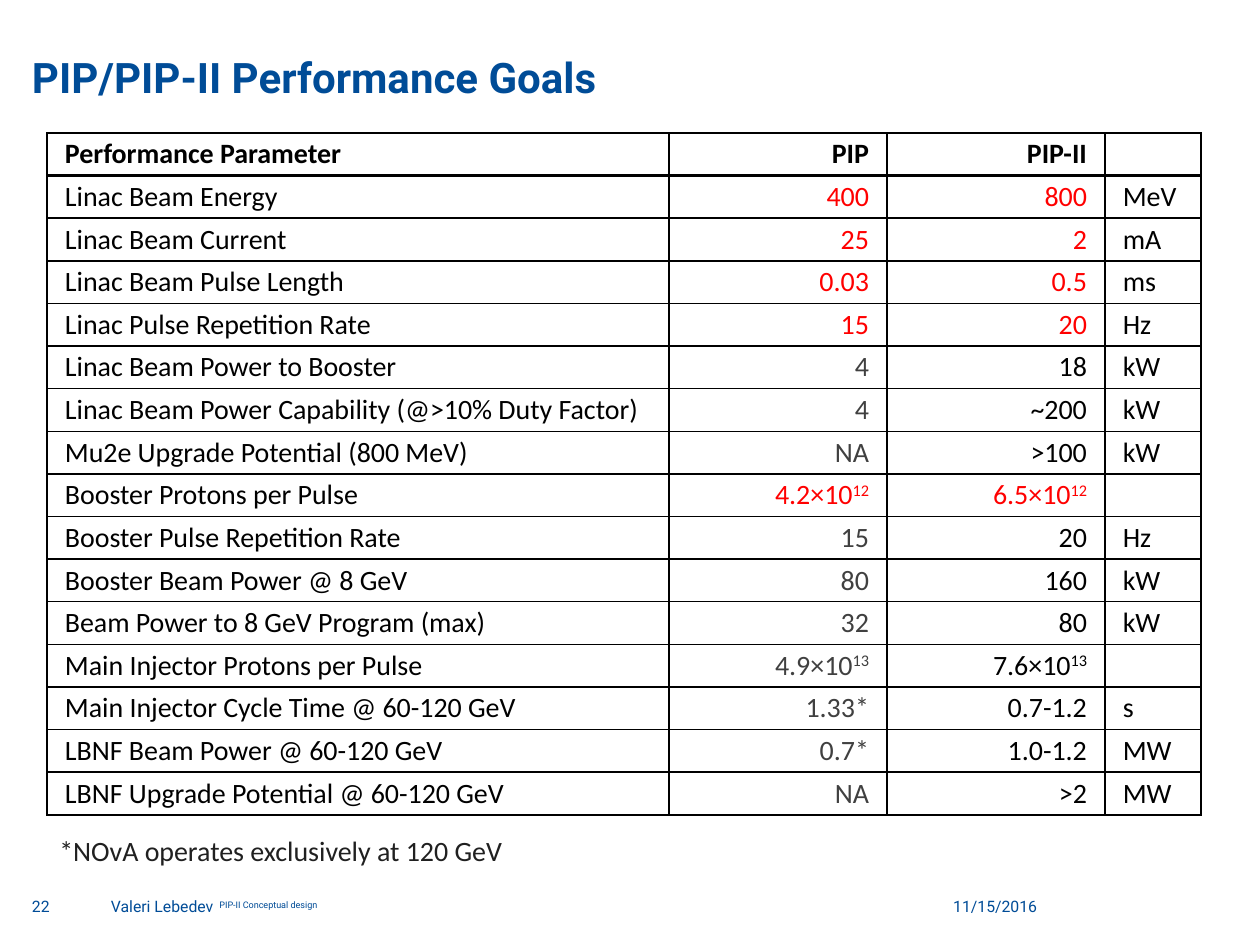
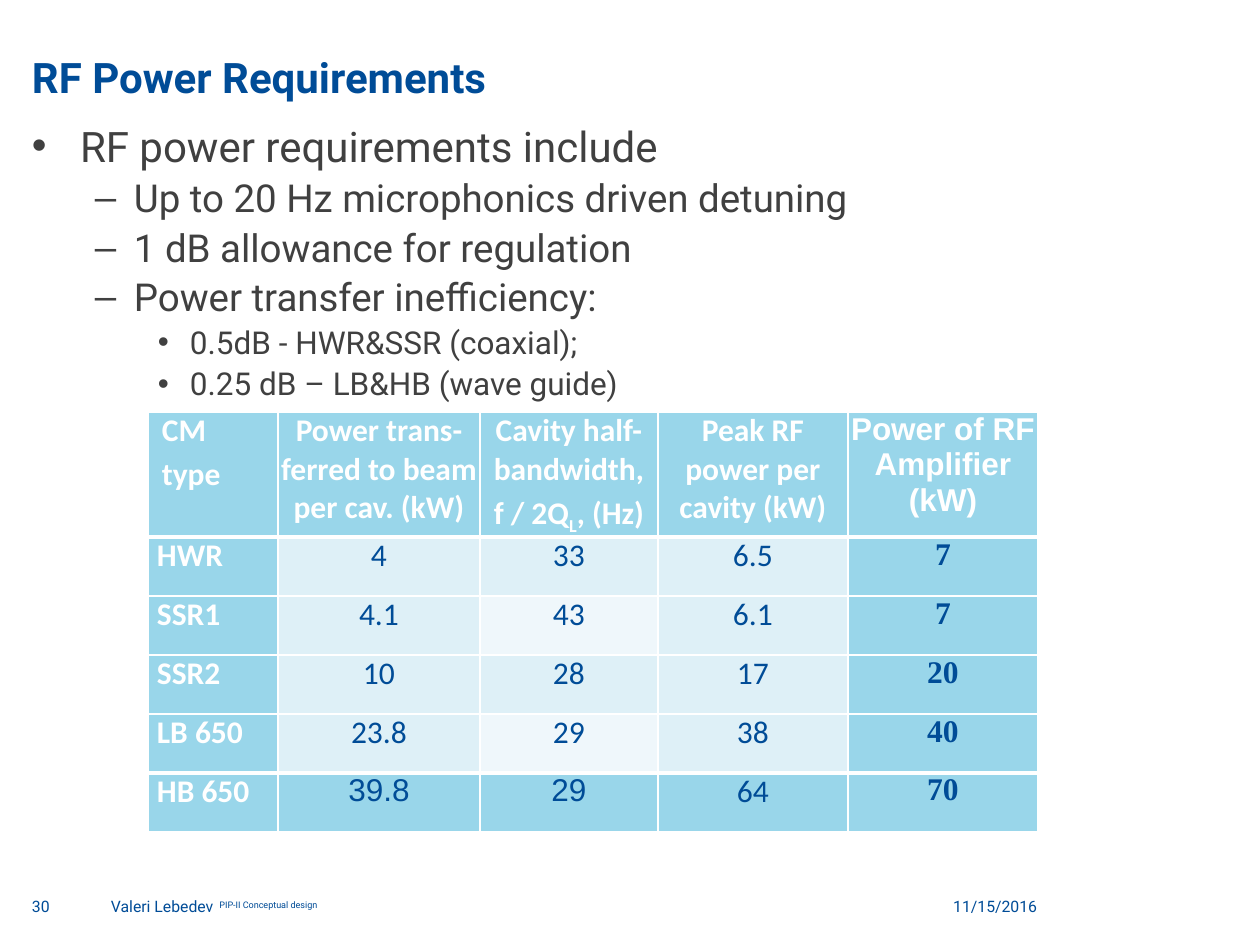
from dataclasses import dataclass, replace

from lxml.etree import SubElement
from pptx import Presentation
from pptx.dml.color import RGBColor
from pptx.enum.text import MSO_ANCHOR as Anchor, MSO_AUTO_SIZE as AutoSize, PP_ALIGN as Align
from pptx.oxml.ns import qn
from pptx.util import Emu, Pt

EMU_PER_PX = 914400 / 126

BLUE = RGBColor(0x00, 0x4C, 0x97)
BLACK = RGBColor(0x00, 0x00, 0x00)
WHITE = RGBColor(0xFF, 0xFF, 0xFF)
RED = RGBColor(0xFF, 0x00, 0x00)
GRAY = RGBColor(0x40, 0x40, 0x40)
NOTE_GRAY = RGBColor(0x20, 0x20, 0x20)
SKY = RGBColor(0x99, 0xD6, 0xEA)
PALE_SKY = RGBColor(0xDE, 0xF0, 0xF7)
PALEST_SKY = RGBColor(0xEF, 0xF7, 0xFB)

SUPERSCRIPT = 30000
SUBSCRIPT = -25000


@dataclass(frozen=True)
class TextStyle:
    size: int
    colour: RGBColor
    font: str = "Calibri"
    bold: bool = False


TITLE_STYLE = TextStyle(24, BLUE, "Roboto", True)
FOOTER_STYLE = TextStyle(9, BLUE, "Roboto")
NOTE_STYLE = TextStyle(16, NOTE_GRAY)
GOAL_STYLE = TextStyle(16, BLACK)
POWER_HEADER_STYLE = TextStyle(18, WHITE, bold=True)
POWER_VALUE_STYLE = TextStyle(18, BLUE)
AMPLIFIER_STYLE = TextStyle(18, BLUE, "Times New Roman", True)

FOOTER_TOP, FOOTER_HEIGHT = 897, 33
AUTHOR_LINE = "Valeri Lebedev | PIP-II Conceptual design"
DATE = "11/15/2016"

GOAL_WIDTHS = [622, 218, 218, 96]
GOAL_HEADER = ("Performance Parameter", "PIP", "PIP-II", "")
GOALS = [
    ("Linac Beam Energy", "400", "800", "MeV"),
    ("Linac Beam Current", "25", "2", "mA"),
    ("Linac Beam Pulse Length", "0.03", "0.5", "ms"),
    ("Linac Pulse Repetition Rate", "15", "20", "Hz"),
    ("Linac Beam Power to Booster", "4", "18", "kW"),
    ("Linac Beam Power Capability (@>10% Duty Factor)", "4", "~200", "kW"),
    ("Mu2e Upgrade Potential (800 MeV)", "NA", ">100", "kW"),
    ("Booster Protons per Pulse", "4.2×10|12", "6.5×10|12", ""),
    ("Booster Pulse Repetition Rate", "15", "20", "Hz"),
    ("Booster Beam Power @ 8 GeV", "80", "160", "kW"),
    ("Beam Power to 8 GeV Program (max)", "32", "80", "kW"),
    ("Main Injector Protons per Pulse", "4.9×10|13", "7.6×10|13", ""),
    ("Main Injector Cycle Time @ 60-120 GeV", "1.33*", "0.7-1.2", "s"),
    ("LBNF Beam Power @ 60-120 GeV", "0.7*", "1.0-1.2", "MW"),
    ("LBNF Upgrade Potential @ 60-120 GeV", "NA", ">2", "MW"),
]
KEY_GOAL_ROWS = {1, 2, 3, 4, 8}

BULLET_LEVELS = [("•", 48, 48, 24), ("–", 102, 39, 22), ("•", 158, 32, 18)]
REQUIREMENTS = [
    (0, "RF power requirements include"),
    (1, "Up to 20 Hz microphonics driven detuning"),
    (1, "1 dB allowance for regulation"),
    (1, "Power transfer inefficiency:"),
    (2, "0.5dB - HWR&SSR (coaxial);"),
    (2, "0.25 dB – LB&HB (wave guide)"),
]

POWER_WIDTHS = [130, 202, 178, 190, 190]
POWER_HEADER = (
    "CM\ntype",
    "Power trans-ferred to beam per cav. (kW)",
    "Cavity half-bandwidth,\nf / 2Q|L|, (Hz)",
    "Peak RF power per cavity (kW)",
    "Power of RF Amplifier (kW)",
)
POWERS = [
    ("HWR", "4", "33", "6.5", "7"),
    ("SSR1", "4.1", "43", "6.1", "7"),
    ("SSR2", "10", "28", "17", "20"),
    ("LB 650", "23.8", "29", "38", "40"),
    ("HB 650", "39.8", "29", "64", "70"),
]


def px(length):
    return Emu(round(length * EMU_PER_PX))


def box(*lengths):
    return [px(length) for length in lengths]


def write_paragraph(paragraph, text, style, align=Align.LEFT, shift=SUPERSCRIPT):
    """Text between bars is raised or lowered by shift."""
    paragraph.alignment = align
    font = paragraph.font
    font.size, font.name, font.bold = Pt(style.size), style.font, style.bold
    font.color.rgb = style.colour
    for index, part in enumerate(text.split("|")):
        run = paragraph.add_run()
        run.text = part
        if index % 2:
            run.font._element.set("baseline", str(shift))


def clear_margins(frame):
    frame.margin_left = frame.margin_top = frame.margin_right = frame.margin_bottom = 0


def add_title(slide, text):
    title = slide.shapes.title
    title.left, title.top, title.width, title.height = box(32, 14, 1197, 88)
    frame = title.text_frame
    clear_margins(frame)
    frame.vertical_anchor = Anchor.BOTTOM
    frame.auto_size = AutoSize.NONE
    write_paragraph(frame.paragraphs[0], text, TITLE_STYLE)


def add_text(slide, position, text, style, align=Align.LEFT):
    frame = slide.shapes.add_textbox(*box(*position)).text_frame
    frame.word_wrap = True
    write_paragraph(frame.paragraphs[0], text, style, align)
    return frame


def add_footer(slide, number):
    for left, width, text, align in (
        (32, 62, number, Align.LEFT),
        (111, 741, AUTHOR_LINE, Align.LEFT),
        (888, 149, DATE, Align.RIGHT),
    ):
        position = (left, FOOTER_TOP, width, FOOTER_HEIGHT)
        clear_margins(add_text(slide, position, text, FOOTER_STYLE, align))


def add_bullets(slide, position, items):
    frame = slide.shapes.add_textbox(*box(*position)).text_frame
    frame.word_wrap = True
    clear_margins(frame)
    for index, (level, text) in enumerate(items):
        symbol, indent, hanging, size = BULLET_LEVELS[level]
        paragraph = frame.add_paragraph() if index else frame.paragraphs[0]
        paragraph.level = level
        if index:
            paragraph.space_before = Pt(2)
        properties = paragraph._p.get_or_add_pPr()
        properties.set("marL", str(px(indent)))
        properties.set("indent", str(-px(hanging)))
        SubElement(properties, qn("a:buFont"), typeface="Arial")
        SubElement(properties, qn("a:buChar"), char=symbol)
        write_paragraph(paragraph, text, TextStyle(size, GRAY, "Roboto"))


def add_plain_table(slide, position, row_count, widths):
    table = slide.shapes.add_table(row_count, len(widths), *box(*position)).table
    table.first_row = table.horz_banding = False
    for column, width in zip(table.columns, widths):
        column.width = px(width)
    return table


def set_borders(cell, colour, top=1, bottom=1):
    properties = cell._tc.get_or_add_tcPr()
    for side, width in (("L", 1), ("R", 1), ("T", top), ("B", bottom)):
        line = SubElement(properties, qn(f"a:ln{side}"), w=str(Pt(width)))
        fill = SubElement(line, qn("a:solidFill"))
        SubElement(fill, qn("a:srgbClr"), val=str(colour))


def write_cell(cell, text, style, align, margin=0, space_after=0, shift=SUPERSCRIPT):
    clear_margins(cell)
    cell.margin_left = px(margin)
    frame = cell.text_frame
    for index, line in enumerate(text.split("\n")):
        paragraph = frame.add_paragraph() if index else frame.paragraphs[0]
        paragraph.space_after = Pt(space_after)
        write_paragraph(paragraph, line, style, align, shift)


def goal_style(row, column):
    if row == 0:
        return replace(GOAL_STYLE, bold=True)
    if column in (1, 2) and row in KEY_GOAL_ROWS:
        return replace(GOAL_STYLE, colour=RED)
    return replace(GOAL_STYLE, colour=GRAY) if column == 1 else GOAL_STYLE


def add_goals_table(slide):
    rows = [GOAL_HEADER, *GOALS]
    table = add_plain_table(slide, (47, 133, 1154, 682), len(rows), GOAL_WIDTHS)
    for row, texts in enumerate(rows):
        for column, text in enumerate(texts):
            cell = table.cell(row, column)
            align = Align.RIGHT if column in (1, 2) else Align.LEFT
            write_cell(cell, text, goal_style(row, column), align, margin=18)
            cell.margin_right = px(18)
            cell.vertical_anchor = Anchor.MIDDLE
            set_borders(cell, BLACK, 1.5 if row == 1 else 1, 1.5 if row == 0 else 1)
            cell.fill.background()


def power_style(row, column):
    if row == 0:
        return replace(POWER_HEADER_STYLE, font="Arial") if column == 4 else POWER_HEADER_STYLE
    if column == 0:
        return POWER_HEADER_STYLE
    if column == 4:
        return AMPLIFIER_STYLE
    if row == len(POWERS) and column < 3:
        return replace(POWER_VALUE_STYLE, font="Arial")
    return POWER_VALUE_STYLE


def power_fill(row, column):
    if row in (0, len(POWERS)) or column in (0, 4):
        return SKY
    return PALEST_SKY if column == 2 and row % 2 == 0 else PALE_SKY


def add_power_table(slide):
    rows = [POWER_HEADER, *POWERS]
    last = len(POWERS)
    table = add_plain_table(slide, (148, 412, 890, 420), len(rows), POWER_WIDTHS)
    for row, texts in enumerate(rows):
        table.rows[row].height = px(59 if row else 125)
        for column, text in enumerate(texts):
            cell = table.cell(row, column)
            align = Align.CENTER if column else Align.LEFT
            margin = 0 if column else 9 if row else 14
            write_cell(cell, text, power_style(row, column), align, margin, 3, SUBSCRIPT)
            top = 3 if row in (1, last) else 1
            bottom = 3 if row in (0, last - 1) else 1
            set_borders(cell, WHITE, top, bottom)
            cell.fill.solid()
            cell.fill.fore_color.rgb = power_fill(row, column)


def add_slide(presentation, title, number):
    slide = presentation.slides.add_slide(presentation.slide_layouts[5])
    add_title(slide, title)
    add_footer(slide, number)
    return slide


def main():
    presentation = Presentation()
    presentation.slide_width, presentation.slide_height = box(1260, 945)

    goals = add_slide(presentation, "PIP/PIP-II Performance Goals", "22")
    add_goals_table(goals)
    add_text(goals, (47, 827, 633, 47), "*NOvA operates exclusively at 120 GeV", NOTE_STYLE)

    power = add_slide(presentation, "RF Power Requirements", "30")
    add_bullets(power, (32, 120, 1228, 299), REQUIREMENTS)
    add_power_table(power)

    presentation.save("out.pptx")


if __name__ == "__main__":
    main()
